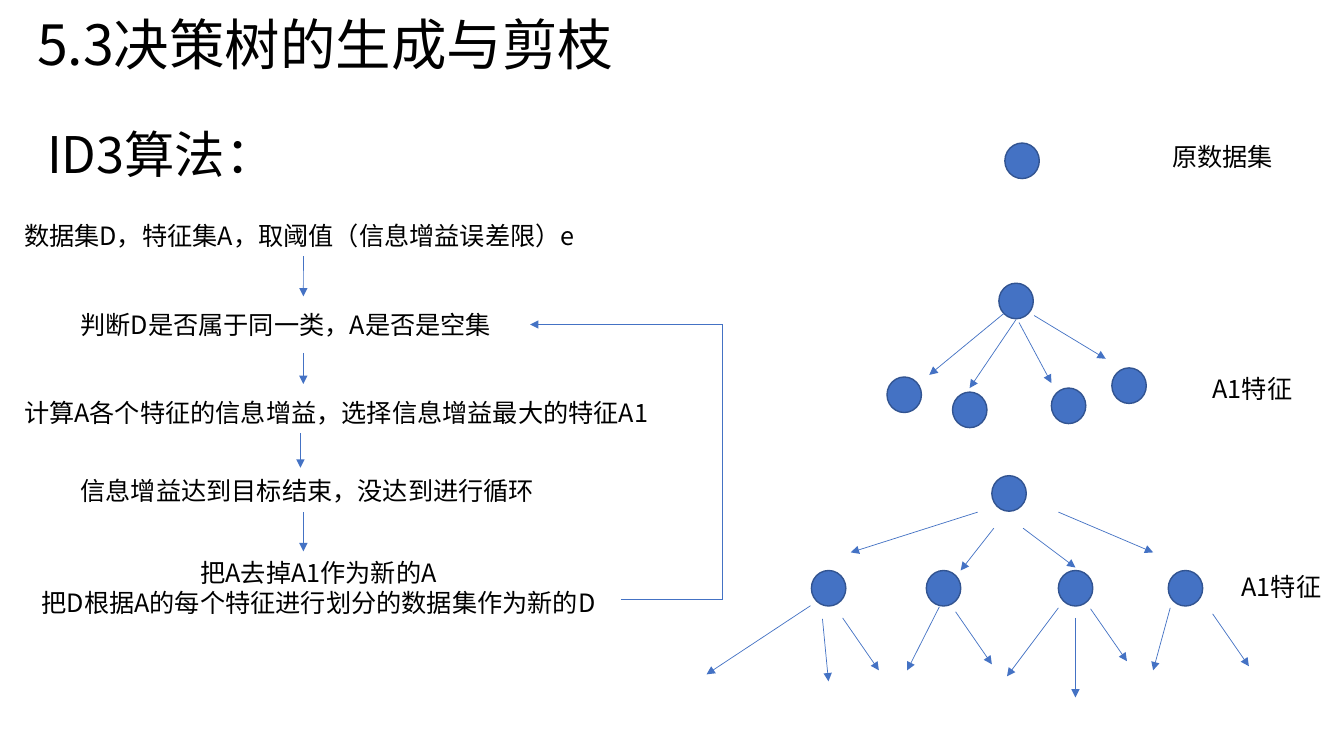
"""Build the slide on the ID3 decision tree algorithm."""
from lxml import etree
from pptx import Presentation
from pptx.dml.color import RGBColor
from pptx.enum import shapes, text
from pptx.oxml import ns
from pptx.util import Pt

FONT = "Noto Sans CJK SC"
BLACK = RGBColor(0x00, 0x00, 0x00)
BLUE = RGBColor(0x44, 0x72, 0xC4)
DARK_BLUE = RGBColor(0x32, 0x54, 0x91)
LEFT, CENTER = text.PP_ALIGN.LEFT, text.PP_ALIGN.CENTER
BODY_SIZE, BODY_HEIGHT = 18, 28.8
NODE_WIDTH, NODE_HEIGHT = 24.6, 25.4

TITLE = ("5.3决策树的生成与剪枝", 19.4, 11.5, 828, 45.4)
HEADING = ("ID3算法：", 26.6, 84.2, 180, 51.1)
STEPS = [
    ("数据集D，特征集A，取阈值（信息增益误差限）e", 10.1, 154.1, 413.3),
    ("判断D是否属于同一类，A是否是空集", 50.4, 217.4, 312.5),
    ("计算A各个特征的信息增益，选择信息增益最大的特征A1", 10.1, 280.1, 466.6),
    ("信息增益达到目标结束，没达到进行循环", 50.4, 336.2, 352.1),
]
LOOP_STEP = ("把A去掉A1作为新的A\n把D根据A的每个特征进行划分的数据集作为新的D",
             19.4, 394.6, 416.2, 51.1)
LEVEL_LABELS = [
    ("原数据集", 830.2, 97.2, 87.1),
    ("A1特征", 859, 262.8, 73.4),
    ("A1特征", 879.8, 404.6, 73.4),
]
STEP_ARROWS = [(216.7, 182.9, 211.7), (216.7, 252, 274.3),
               (214.6, 309.6, 334.1), (216.7, 365.8, 393.8)]
LOOP = [(443.5, 428.4), (516.2, 428.4), (516.2, 231.8), (378.7, 231.8)]
LEAF_TOP = 407.5
NODES = [
    (717.8, 102.2),
    (713.5, 202.3), (633.6, 269.3), (680.4, 280.1), (751, 277.2), (794.2, 262.8),
    (708.5, 339.8),
] + [(left, LEAF_TOP) for left in (579.6, 661.7, 756, 834.5)]
BRANCHES = [
    (717.1, 223.9, 663.8, 267.8), (725.8, 228.2, 692.6, 277.2),
    (727.9, 230.4, 751, 273.6), (738.7, 225.4, 789.8, 256.3),
    (698.4, 365.8, 607.7, 394.6), (709.9, 377.3, 686.2, 407.5),
    (730.8, 377.3, 768.2, 405.4), (756, 365.8, 823.7, 394.6),
    (578.9, 432.7, 504.7, 481.7), (587.5, 442.1, 591.8, 486.7),
    (601.9, 441.4, 627.8, 478.8), (671, 433.4, 648, 478.8),
    (682.6, 437, 708.5, 474.5), (756, 434.2, 719.3, 483.1),
    (768.2, 441.4, 768.2, 498.2), (779, 434.9, 805, 472.3),
    (835.9, 434.2, 823.7, 478.8), (866.2, 438.5, 892.1, 475.9),
]


def add_text(slide, words, left, top, width, height=BODY_HEIGHT,
             size=BODY_SIZE, align=LEFT):
    box = slide.shapes.add_textbox(Pt(left), Pt(top), Pt(width), Pt(height))
    frame = box.text_frame
    frame.word_wrap = True
    frame.text = words
    for paragraph in frame.paragraphs:
        paragraph.alignment = align
        font = paragraph.font
        font.size, font.name = Pt(size), FONT
        font.color.rgb = BLACK
        latin = paragraph._p.find(".//" + ns.qn("a:latin"))
        east_asian = etree.Element(ns.qn("a:ea"), typeface=FONT)
        latin.addnext(east_asian)
    return box


def add_line(slide, x1, y1, x2, y2, arrow=True):
    line = slide.shapes.add_connector(
        shapes.MSO_CONNECTOR.STRAIGHT, Pt(x1), Pt(y1), Pt(x2), Pt(y2))
    line.line.color.rgb = BLUE
    line.line.width = Pt(0.5)
    if arrow:
        etree.SubElement(line.line._get_or_add_ln(), ns.qn("a:tailEnd"), type="triangle")
    etree.SubElement(line._element.spPr, ns.qn("a:effectLst"))
    return line


def add_node(slide, left, top):
    node = slide.shapes.add_shape(shapes.MSO_SHAPE.OVAL, Pt(left), Pt(top),
                                  Pt(NODE_WIDTH), Pt(NODE_HEIGHT))
    node.shadow.inherit = False
    node.fill.solid()
    node.fill.fore_color.rgb = BLUE
    node.line.color.rgb = DARK_BLUE
    node.line.width = Pt(1)


def main():
    deck = Presentation()
    deck.slide_width, deck.slide_height = Pt(960), Pt(540)
    slide = deck.slides.add_slide(deck.slide_layouts[6])

    title = add_text(slide, *TITLE, size=39.6).text_frame
    title.vertical_anchor = text.MSO_ANCHOR.MIDDLE
    title.paragraphs[0].line_spacing = 0.9
    add_text(slide, *HEADING, size=36)
    step_boxes = [add_text(slide, *step) for step in STEPS]
    add_text(slide, *LOOP_STEP, align=CENTER)
    for label in LEVEL_LABELS:
        add_text(slide, *label)

    step_arrows = [add_line(slide, x, start, x, end) for x, start, end in STEP_ARROWS]
    step_arrows[0].begin_connect(step_boxes[0], 2)
    for start, end in zip(LOOP, LOOP[1:]):
        add_line(slide, *start, *end, arrow=end == LOOP[-1])
    for node in NODES:
        add_node(slide, *node)
    for branch in BRANCHES:
        add_line(slide, *branch)

    deck.save("out.pptx")


if __name__ == "__main__":
    main()
